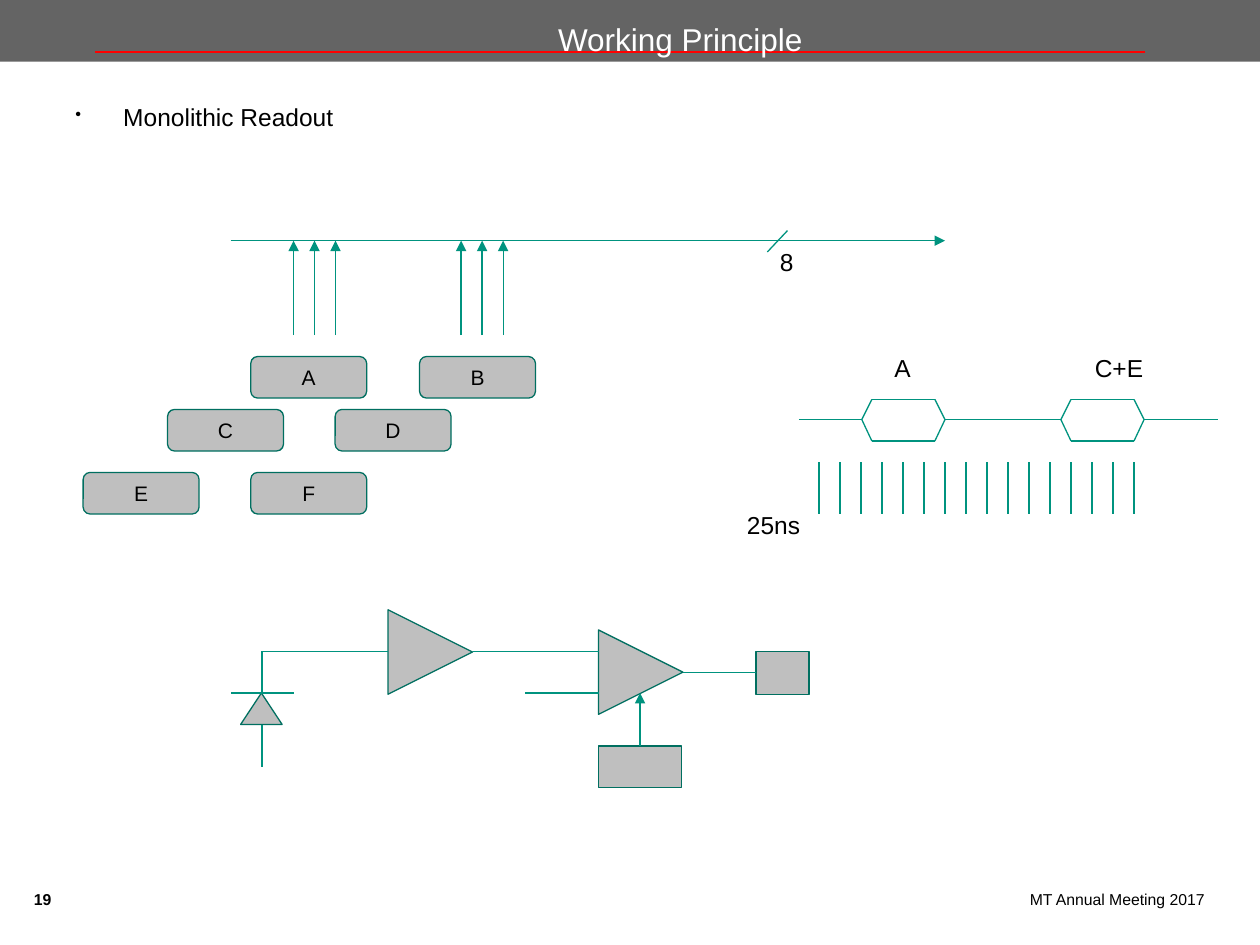
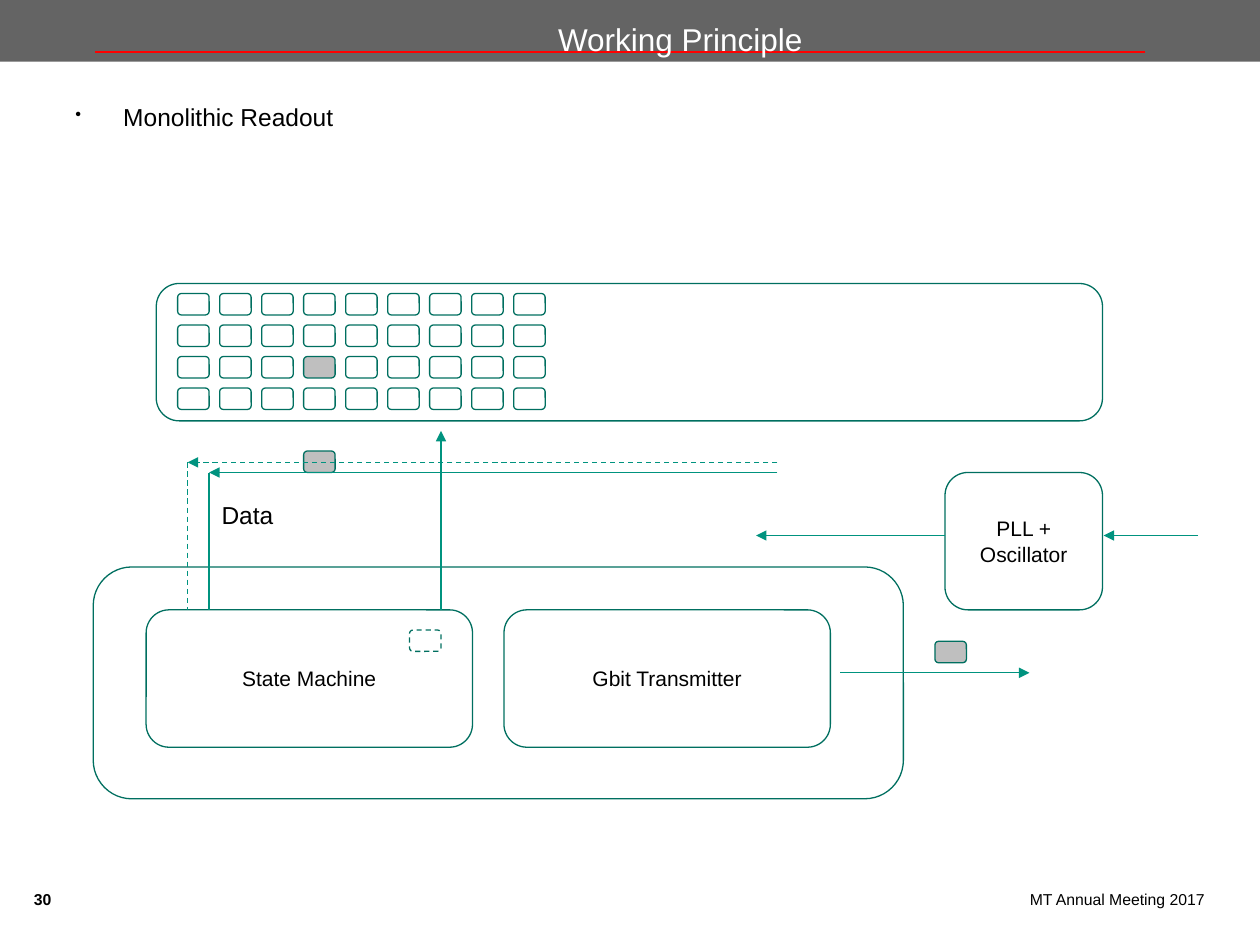
from lxml import etree
from pptx import Presentation
from pptx.dml.color import RGBColor
from pptx.enum.dml import MSO_LINE
from pptx.enum.shapes import MSO_CONNECTOR, MSO_SHAPE
from pptx.enum.text import MSO_ANCHOR, MSO_AUTO_SIZE, PP_ALIGN
from pptx.oxml.ns import qn
from pptx.util import Inches, Pt

RECTANGLE, ROUNDED = MSO_SHAPE.RECTANGLE, MSO_SHAPE.ROUNDED_RECTANGLE
TRIANGLE = MSO_SHAPE.ISOSCELES_TRIANGLE
STRAIGHT, DASH = MSO_CONNECTOR.STRAIGHT, MSO_LINE.DASH
LEFT, CENTER, RIGHT = PP_ALIGN.LEFT, PP_ALIGN.CENTER, PP_ALIGN.RIGHT
TOP, MIDDLE = MSO_ANCHOR.TOP, MSO_ANCHOR.MIDDLE
TOP_SIDE, LEFT_SIDE = 0, 1

FONT = "Arial"
BLACK, WHITE, RED = "000000", "FFFFFF", "FF0000"
BAND, GREY, OUTLINE, WIRE = "646464", "BFBFBF", "006F60", "00937F"

# Shared wording
TITLE = "Working Principle"
TOPIC = "Monolithic Readout"
FOOTER = "MT Annual Meeting 2017"

# Slide 19: pixel addressing, timing and front end
PIXEL_SIZE = (0.92, 0.33)
PIXELS = [("E", 0.66, 3.75), ("C", 1.33, 3.25), ("A", 1.99, 2.83),
          ("F", 1.99, 3.75), ("D", 2.66, 3.25), ("B", 3.33, 2.83)]
BUS_Y = 1.91
BUS_INPUT_GROUPS = [2.33, 3.66]
INPUTS_PER_GROUP = 3
LINE_PITCH = 1 / 6
SIGNAL_Y = 3.33
PULSES = [6.84, 8.42]
PULSE_OUTLINE = [(0, 0), (0.08, -0.16), (0.58, -0.16), (0.66, 0),
                 (0.58, 0.17), (0.08, 0.17), (0, 0)]
SIGNAL_GAPS = [(6.34, 6.84), (7.5, 8.42), (9.08, 9.67)]
CLOCK_START, CLOCK_TICKS = 6.5, 16
DIAGRAM_LABELS = [("8", 6.09, 1.91, 0.31), ("A", 7, 2.75, 0.33),
                  ("C+E", 8.59, 2.75, 0.59), ("25ns", 5.83, 4, 0.63)]
DIODE = (1.91, 5.5, 0.33, 0.25)
AMPLIFIERS = [(3.08, 4.84, 0.67, 0.67), (4.75, 5, 0.67, 0.67)]
THRESHOLD_BOX = (4.75, 5.92, 0.66, 0.33)
OUTPUT_BOX = (6, 5.17, 0.42, 0.34)
CIRCUIT_WIRES = [
    ((2.33, 5.5), (1.83, 5.5)), ((2.08, 5.75), (2.08, 6.09)),
    ((2.08, 5.17), (2.08, 5.5)), ((3.08, 5.17), (2.08, 5.17)),
    ((4.75, 5.17), (3.75, 5.17)), ((4.75, 5.5), (4.17, 5.5)),
]

# Slide 30: readout chain
CELL_SIZE = (0.25, 0.17)
MATRIX_LEFT, MATRIX_TOP = 1.41, 2.33
COLUMNS, ROWS = 9, 4
COLUMN_PITCH, ROW_PITCH = 1 / 3, 0.25
HIT_CELL = (3, 2)
MATRIX_FRAME = (1.24, 2.25, 7.51, 1.09)
CHIP_FRAME = (0.74, 4.5, 6.43, 1.84)
BLOCKS = [("State Machine", (1.16, 4.84, 2.59, 1.09)),
          ("Gbit Transmitter", (4, 4.84, 2.59, 1.09)),
          ("PLL + Oscillator", (7.5, 3.75, 1.25, 1.09))]
DATA_PACKETS = [(2.41, 3.58), (7.42, 5.09)]
STORED_CELL = (3.25, 5)
DATA_RETURNS = [(1.66, 3.75, None), (1.49, 3.67, DASH)]  # corner x, y, dash
DATA_START_X, BLOCK_TOP = 6.17, 4.84
READOUT_ARROWS = [((3.5, 4.84), (3.5, 3.42)), ((6.67, 5.34), (8.17, 5.34)),
                  ((9.51, 4.25), (8.76, 4.25)), ((7.5, 4.25), (6, 4.25))]


def color(hex_string):
    return RGBColor.from_string(hex_string)


def write_text(shape, text, size=12, font_color=BLACK, bold=False, align=LEFT,
               anchor=TOP, wrap=True, inset=None, bullet=False):
    frame = shape.text_frame
    frame.text = text
    frame.word_wrap = wrap
    frame.auto_size = MSO_AUTO_SIZE.NONE
    frame.vertical_anchor = anchor
    if inset is not None:
        frame.margin_left = frame.margin_right = Inches(inset)
        frame.margin_top = frame.margin_bottom = Inches(inset)
    paragraph = frame.paragraphs[0]
    paragraph.alignment = align
    if bullet:
        properties = paragraph._p.get_or_add_pPr()
        properties.set("marL", str(Inches(0.38)))
        properties.set("indent", str(Inches(-0.38)))
        etree.SubElement(properties, qn("a:buSzPct"), val="70000")
        etree.SubElement(properties, qn("a:buChar"), char="•")
    font = paragraph.runs[0].font
    font.name, font.size, font.bold = FONT, Pt(size), bold
    font.color.rgb = color(font_color)


def add_label(slide, text, box, **text_format):
    label = slide.shapes.add_textbox(*map(Inches, box))
    write_text(label, text, **text_format)


def add_box(slide, kind, box, fill=None, line=OUTLINE, dash=None, text=None, rotation=0):
    shape = slide.shapes.add_shape(kind, *map(Inches, box))
    shape.shadow.inherit = False
    shape.rotation = rotation
    if fill:
        shape.fill.solid()
        shape.fill.fore_color.rgb = color(fill)
    else:
        shape.fill.background()
    if line:
        shape.line.color.rgb = color(line)
        shape.line.width = Pt(0.75)
        shape.line.dash_style = dash
    else:
        shape.line.fill.background()
    if text:
        write_text(shape, text, align=CENTER, anchor=MIDDLE)
    return shape


def add_wire(slide, start, end, arrow=False, dash=None, line=WIRE, width=0.75):
    wire = slide.shapes.add_connector(STRAIGHT, *map(Inches, (*start, *end)))
    wire.line.color.rgb = color(line)
    wire.line.width = Pt(width)
    wire.line.dash_style = dash
    if arrow:
        etree.SubElement(wire.line._get_or_add_ln(), qn("a:tailEnd"), type="triangle")
    etree.SubElement(wire.element.spPr, qn("a:effectLst"))
    return wire


def add_base_slide(presentation, number):
    """Add a slide with the band, red rule, title, topic bullet and footer."""
    slide = presentation.slides.add_slide(presentation.slide_layouts[5])
    title = slide.shapes.title
    band = add_box(slide, RECTANGLE, (0, 0, 10, 0.49), fill=BAND, line=None)
    rule = add_wire(slide, (9.09, 0.41), (0.75, 0.41), line=RED, width=1)
    for backdrop in (band, rule):
        title.element.addprevious(backdrop.element)
    title.left, title.top, title.width, title.height = map(Inches, (1.3, 0.12, 8.2, 0.38))
    write_text(title, TITLE, size=18, font_color=WHITE, align=CENTER, anchor=MIDDLE)
    add_label(slide, TOPIC, (0.5, 0.76, 9, 0.41), size=14, bullet=True)
    add_label(slide, FOOTER, (6.57, 7.06, 2.99, 0.39), size=9, align=RIGHT, inset=0)
    add_label(slide, number, (0.27, 7.06, 0.36, 0.24), size=9, bold=True, inset=0)
    return slide


def draw_address_bus(slide):
    for name, left, top in PIXELS:
        add_box(slide, ROUNDED, (left, top, *PIXEL_SIZE), fill=GREY, text=name)
    for first_x in BUS_INPUT_GROUPS:
        for index in range(INPUTS_PER_GROUP):
            x = first_x + index * LINE_PITCH
            add_wire(slide, (x, 2.66), (x, BUS_Y), arrow=True)
    add_wire(slide, (1.83, BUS_Y), (7.5, BUS_Y), arrow=True)
    add_wire(slide, (6.25, 1.83), (6.09, 2))


def draw_timing(slide):
    for start_x, end_x in SIGNAL_GAPS:
        add_wire(slide, (start_x, SIGNAL_Y), (end_x, SIGNAL_Y))
    for left in PULSES:
        corners = [(left + x, SIGNAL_Y + y) for x, y in PULSE_OUTLINE]
        for start, end in zip(corners, corners[1:]):
            add_wire(slide, start, end)
    for index in range(CLOCK_TICKS):
        x = CLOCK_START + index * LINE_PITCH
        add_wire(slide, (x, 3.67), (x, 4.08))


def draw_front_end(slide):
    add_box(slide, TRIANGLE, DIODE, fill=GREY)
    for box in AMPLIFIERS:
        add_box(slide, TRIANGLE, box, fill=GREY, rotation=90)
    for start, end in CIRCUIT_WIRES:
        add_wire(slide, start, end)
    threshold = add_box(slide, RECTANGLE, THRESHOLD_BOX, fill=GREY)
    output = add_box(slide, RECTANGLE, OUTPUT_BOX, fill=GREY)
    add_wire(slide, (5.08, 5.92), (5.08, 5.5), arrow=True).begin_connect(threshold, TOP_SIDE)
    add_wire(slide, (5.42, 5.34), (6, 5.34)).end_connect(output, LEFT_SIDE)


def draw_pixel_matrix(slide):
    add_box(slide, ROUNDED, MATRIX_FRAME)
    for column in range(COLUMNS):
        for row in range(ROWS):
            left = MATRIX_LEFT + column * COLUMN_PITCH
            top = MATRIX_TOP + row * ROW_PITCH
            fill = GREY if (column, row) == HIT_CELL else None
            add_box(slide, ROUNDED, (left, top, *CELL_SIZE), fill=fill)


def draw_readout_chain(slide):
    add_box(slide, ROUNDED, CHIP_FRAME)
    for name, box in BLOCKS:
        add_box(slide, ROUNDED, box, text=name)
    for position in DATA_PACKETS:
        add_box(slide, ROUNDED, (*position, *CELL_SIZE), fill=GREY)
    add_box(slide, ROUNDED, (*STORED_CELL, *CELL_SIZE), dash=DASH)
    for x, y, dash in DATA_RETURNS:
        add_wire(slide, (DATA_START_X, y), (x, y), arrow=True, dash=dash)
        add_wire(slide, (x, y), (x, BLOCK_TOP), dash=dash)
    for start, end in READOUT_ARROWS:
        add_wire(slide, start, end, arrow=True)
    add_label(slide, "Data", (1.66, 3.92, 0.62, 0.34), size=14, wrap=False)


def main():
    presentation = Presentation()
    presentation.slide_width, presentation.slide_height = Inches(10), Inches(7.5)

    addressing = add_base_slide(presentation, "19")
    draw_address_bus(addressing)
    draw_timing(addressing)
    draw_front_end(addressing)
    for text, left, top, width in DIAGRAM_LABELS:
        add_label(addressing, text, (left, top, width, 0.34), size=14, wrap=False)

    readout = add_base_slide(presentation, "30")
    draw_pixel_matrix(readout)
    draw_readout_chain(readout)

    presentation.save("out.pptx")


if __name__ == "__main__":
    main()
